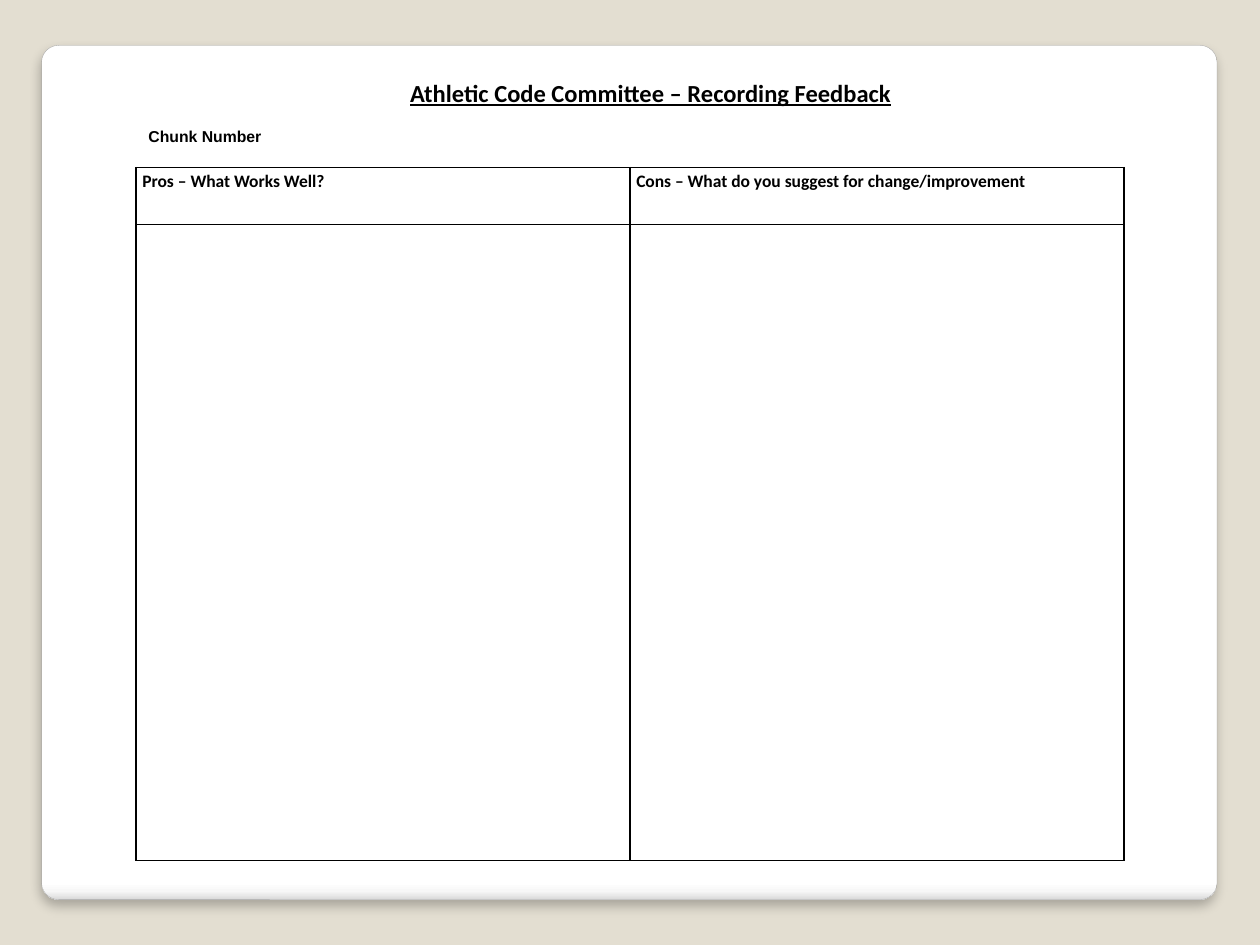
"""Build the feedback recording sheet: a white card with a two-column table."""
import pptx
import pptx.dml.color
import pptx.enum.shapes
import pptx.enum.text
import pptx.oxml
import pptx.oxml.ns
import pptx.util

qn = pptx.oxml.ns.qn
inch = pptx.util.Inches
NS = pptx.oxml.ns.nsdecls("a")


def tint(code):
    return pptx.dml.color.RGBColor.from_string(code)


def style(para, size, face, under=False):
    for run in para.runs:
        font = run.font
        font.size = pptx.util.Pt(size)
        font.name = face
        font.bold = True
        font.underline = under
        font.color.rgb = tint("000000")


deck = pptx.Presentation()
deck.slide_width, deck.slide_height = inch(10), inch(7.5)
slide = deck.slides.add_slide(deck.slide_layouts[6])
slide.background.fill.solid()
slide.background.fill.fore_color.rgb = tint("E3DED1")

card = slide.shapes.add_shape(
    pptx.enum.shapes.MSO_SHAPE.ROUNDED_RECTANGLE,
    inch(0.33), inch(0.36), inch(9.33), inch(6.78))
card.adjustments[0] = 0.02
card.fill.gradient()
card.fill.gradient_angle = 270
stops = card.fill._fill._gradFill.find(qn("a:gsLst"))
stops.clear()
for pos, code in ((0, "FFFFFF"), (98, "FFFFFF"), (99, "F7F7F7"), (100, "DADADA")):
    stops.append(pptx.oxml.parse_xml(
        f'<a:gs {NS} pos="{pos * 1000}"><a:srgbClr val="{code}"/></a:gs>'))
card.line.color.rgb = tint("A4A4A4")
card.line.width = pptx.util.Pt(0.16)
card.shadow.inherit = False
card._element.spPr.find(qn("a:effectLst")).append(pptx.oxml.parse_xml(
    f'<a:outerShdw {NS} blurRad="{pptx.util.Pt(6)}" dist="{pptx.util.Pt(4)}" '
    'dir="5400000" rotWithShape="0"><a:srgbClr val="000000">'
    '<a:alpha val="25000"/></a:srgbClr></a:outerShdw>'))

heads = ("Pros – What Works Well?", "Cons – What do you suggest for change/improvement")
tall = (0.45, 5.05)
grid = slide.shapes.add_table(
    2, 2, inch(1.08), inch(1.33), inch(7.84), inch(sum(tall))).table
grid.first_row = grid.horz_banding = False
for row, high in zip(grid.rows, tall):
    row.height = inch(high)
for cell in grid.iter_cells():
    cell.margin_left = cell.margin_right = inch(0.05)
    cell.margin_top = cell.margin_bottom = 0
    props = cell._tc.get_or_add_tcPr()
    for side in ("lnL", "lnR", "lnT", "lnB"):
        props.append(pptx.oxml.parse_xml(
            f'<a:{side} {NS} w="{pptx.util.Pt(1)}"><a:solidFill>'
            f'<a:srgbClr val="000000"/></a:solidFill></a:{side}>'))
    cell.fill.background()
for col, text in enumerate(heads):
    para = grid.cell(0, col).text_frame.paragraphs[0]
    para.text = text
    para.line_spacing = 1.15
    style(para, 10, "Calibri")

frame = slide.shapes.add_textbox(
    inch(1.08), inch(0.57), inch(8.17), inch(0.94)).text_frame
frame.word_wrap = True
frame.vertical_anchor = pptx.enum.text.MSO_ANCHOR.TOP
frame.text = "Athletic Code Committee – Recording Feedback\nChunk Number"
title, chunk = frame.paragraphs
title.alignment = pptx.enum.text.PP_ALIGN.CENTER
style(title, 14, "Calibri", True)
chunk.space_before = pptx.util.Pt(11)
style(chunk, 9, "Arial")

deck.save("out.pptx")
